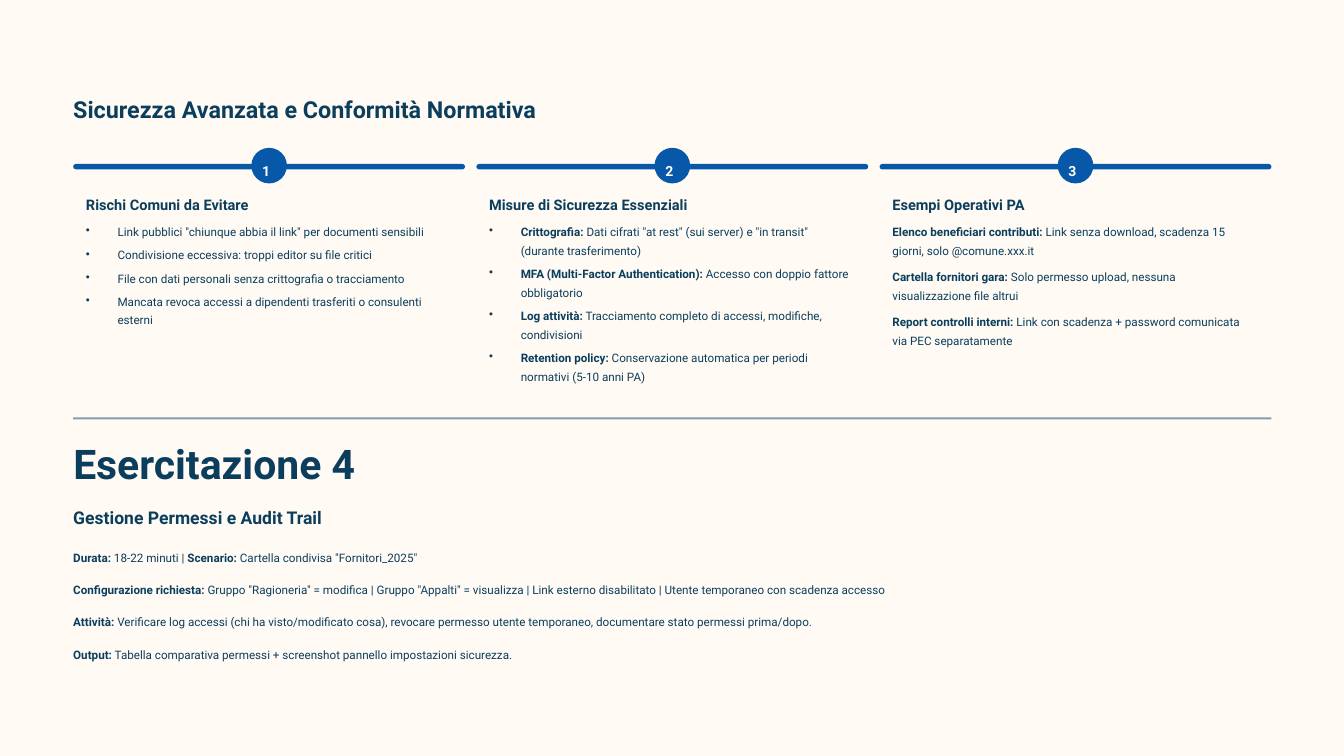
from dataclasses import dataclass

from lxml import etree
from pptx import Presentation
from pptx.dml.color import RGBColor
from pptx.enum.shapes import MSO_SHAPE
from pptx.oxml.ns import qn
from pptx.util import Inches, Pt

RECT = MSO_SHAPE.RECTANGLE
ROUNDED = MSO_SHAPE.ROUNDED_RECTANGLE


@dataclass(frozen=True)
class Style:
    size: float
    leading: float
    color: RGBColor
    bold: bool = True


class Theme:
    font = "Roboto"
    paper = RGBColor(0xFF, 0xFA, 0xF4)
    ink = RGBColor(0x0B, 0x3E, 0x5D)
    accent = RGBColor(0x08, 0x58, 0xA9)
    title = Style(25, 31.2, ink)
    badge = Style(15, 24.4, RGBColor(0xFF, 0xFF, 0xFF))
    heading = Style(15.6, 19.4, ink)
    body = Style(12.5, 20, ink, False)
    exercise = Style(43.8, 54.4, ink)
    subtitle = Style(18.8, 23.8, ink)


MARGIN = 1.09
CONTENT_WIDTH = 17.83
COLUMN_WIDTH = 5.83
COLUMN_PITCH = 6
COLUMN_PADDING = 0.19
BADGE_SIZE = 0.53
LINE_HEIGHT = 0.28
BULLET_INDENT = 0.47

# Each column: heading, bulleted, gap between items, items as (label, text, lines)
COLUMNS = [
    ("Rischi Comuni da Evitare", True, 0.065, [
        ("", 'Link pubblici "chiunque abbia il link" per documenti sensibili', 1),
        ("", "Condivisione eccessiva: troppi editor su file critici", 1),
        ("", "File con dati personali senza crittografia o tracciamento", 1),
        ("", "Mancata revoca accessi a dipendenti trasferiti o consulenti esterni", 2),
    ]),
    ("Misure di Sicurezza Essenziali", True, 0.065, [
        ("Crittografia:",
         ' Dati cifrati "at rest" (sui server) e "in transit" (durante trasferimento)', 2),
        ("MFA (Multi-Factor Authentication):",
         " Accesso con doppio fattore obbligatorio", 2),
        ("Log attività:",
         " Tracciamento completo di accessi, modifiche, condivisioni", 2),
        ("Retention policy:",
         " Conservazione automatica per periodi normativi (5-10 anni PA)", 2),
    ]),
    ("Esempi Operativi PA", False, 0.11, [
        ("Elenco beneficiari contributi:",
         " Link senza download, scadenza 15 giorni, solo @comune.xxx.it", 2),
        ("Cartella fornitori gara:",
         " Solo permesso upload, nessuna visualizzazione file altrui", 2),
        ("Report controlli interni:",
         " Link con scadenza + password comunicata via PEC separatamente", 2),
    ]),
]

# Each line alternates bold labels and plain text
EXERCISE_LINES = [
    ["Durata:", " 18-22 minuti | ", "Scenario:", ' Cartella condivisa "Fornitori_2025"'],
    ["Configurazione richiesta:",
     ' Gruppo "Ragioneria" = modifica | Gruppo "Appalti" = visualizza'
     " | Link esterno disabilitato | Utente temporaneo con scadenza accesso"],
    ["Attività:",
     " Verificare log accessi (chi ha visto/modificato cosa), revocare permesso"
     " utente temporaneo, documentare stato permessi prima/dopo."],
    ["Output:",
     " Tabella comparativa permessi + screenshot pannello impostazioni sicurezza."],
]


def add_block(slide, kind, left, top, width, height, color, rounding=None):
    block = slide.shapes.add_shape(
        kind, Inches(left), Inches(top), Inches(width), Inches(height))
    block.shadow.inherit = False
    block.fill.solid()
    block.fill.fore_color.rgb = color
    block.line.fill.background()
    if rounding is not None:
        block.adjustments[0] = rounding
    return block


def set_opacity(block, percent):
    color = block.fill._xPr.find(qn("a:solidFill"))[0]
    etree.SubElement(color, qn("a:alpha")).set("val", str(percent * 1000))


def add_bullet(paragraph):
    properties = paragraph._p.get_or_add_pPr()
    indent = Inches(BULLET_INDENT)
    properties.set("marL", str(indent))
    properties.set("indent", str(-indent))
    etree.SubElement(properties, qn("a:buChar")).set("char", "•")


def add_text(slide, left, top, width, height, style, runs, wrap=False, bulleted=False):
    """Place one paragraph made of (text, bold) runs."""
    box = slide.shapes.add_textbox(
        Inches(left), Inches(top), Inches(width), Inches(height))
    frame = box.text_frame
    frame.word_wrap = wrap
    frame.margin_left = frame.margin_right = 0
    frame.margin_top = frame.margin_bottom = 0
    paragraph = frame.paragraphs[0]
    if bulleted:
        add_bullet(paragraph)
    paragraph.line_spacing = Pt(style.leading)
    for text, bold in runs:
        run = paragraph.add_run()
        run.text = text
        run.font.name = Theme.font
        run.font.size = Pt(style.size)
        run.font.bold = bold
        run.font.color.rgb = style.color


def add_heading(slide, left, top, width, height, style, text):
    add_text(slide, left, top, width, height, style, [(text, style.bold)])


def add_column(slide, number, left, heading, bulleted, gap, items):
    badge_left = left + (COLUMN_WIDTH - BADGE_SIZE) / 2
    text_left = left + COLUMN_PADDING
    text_width = COLUMN_WIDTH - 0.4
    add_block(slide, ROUNDED, left, 2.46, COLUMN_WIDTH, 3.46, Theme.paper, 0.03)
    add_block(slide, ROUNDED, left, 2.44, COLUMN_WIDTH, 0.08, Theme.accent, 0.5)
    add_block(slide, ROUNDED, badge_left, 2.2, BADGE_SIZE, BADGE_SIZE, Theme.accent, 0.5)
    add_heading(slide, badge_left + 0.16, 2.33, 0.21, 0.26, Theme.badge, str(number))
    add_heading(slide, text_left, 2.9, 3, 0.28, Theme.heading, heading)

    top = 3.28
    for label, text, lines in items:
        runs = [(label, True), (text, False)] if label else [(text, False)]
        height = lines * LINE_HEIGHT
        add_text(slide, text_left, top, text_width, height, Theme.body, runs,
                 wrap=True, bulleted=bulleted)
        top += height + gap


def add_exercise(slide):
    add_heading(slide, MARGIN, 6.5, 6.08, 0.76, Theme.exercise, "Esercitazione 4")
    add_heading(slide, MARGIN, 7.53, 3.74, 0.33, Theme.subtitle,
                "Gestione Permessi e Audit Trail")
    for row, parts in enumerate(EXERCISE_LINES):
        runs = [(part, index % 2 == 0) for index, part in enumerate(parts)]
        add_text(slide, MARGIN, 8.12 + row * 0.483, CONTENT_WIDTH, LINE_HEIGHT,
                 Theme.body, runs)


def main():
    deck = Presentation()
    deck.slide_width = Inches(20)
    deck.slide_height = Inches(11.25)
    slide = deck.slides.add_slide(deck.slide_layouts[6])
    slide.background.fill.solid()
    slide.background.fill.fore_color.rgb = Theme.paper

    add_heading(slide, MARGIN, 1.4, 7, 0.44, Theme.title,
                "Sicurezza Avanzata e Conformità Normativa")
    for index, column in enumerate(COLUMNS):
        add_column(slide, index + 1, MARGIN + index * COLUMN_PITCH, *column)
    divider = add_block(slide, RECT, MARGIN, 6.21, CONTENT_WIDTH, 0.03, Theme.ink)
    set_opacity(divider, 50)
    add_exercise(slide)
    deck.save("out.pptx")


if __name__ == "__main__":
    main()
